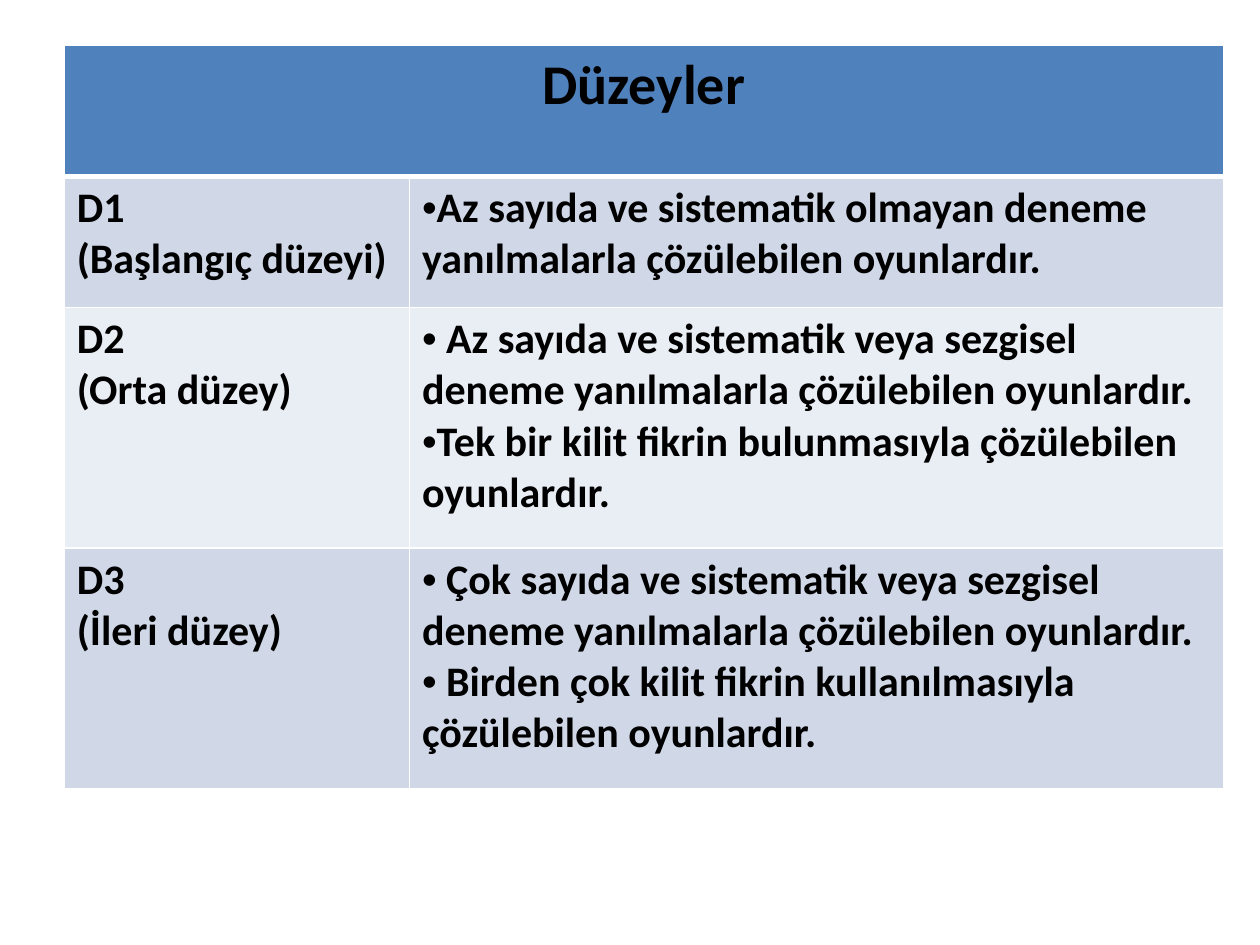
from dataclasses import dataclass

from lxml.etree import SubElement
from pptx import Presentation
from pptx.dml.color import RGBColor
from pptx.enum.text import PP_ALIGN
from pptx.oxml.ns import qn
from pptx.util import Pt


@dataclass(frozen=True)
class Theme:
    font: str = "Calibri"
    title_size: int = 32
    body_size: int = 24
    text: str = "000000"
    header: str = "4F81BD"
    bands: tuple = ("D0D8E8", "E9EDF4")
    border: str = "FFFFFF"
    thin: int = 1
    thick: int = 3


LEVELS = [
    (["D1", "(Başlangıç düzeyi)"],
     ["Az sayıda ve sistematik olmayan deneme yanılmalarla çözülebilen oyunlardır."]),
    (["D2", "(Orta düzey)"],
     [" Az sayıda ve sistematik veya sezgisel deneme yanılmalarla çözülebilen oyunlardır.",
      "Tek bir kilit fikrin bulunmasıyla çözülebilen oyunlardır."]),
    (["D3", "(İleri düzey)"],
     [" Çok sayıda ve sistematik veya sezgisel deneme yanılmalarla çözülebilen oyunlardır.",
      " Birden çok kilit fikrin kullanılmasıyla çözülebilen oyunlardır."]),
]


class SlideBuilder:
    def __init__(self, page, theme):
        self.page = page
        self.theme = theme

    def add_table(self, left, top, widths, heights):
        table = self.page.shapes.add_table(
            len(heights), len(widths), Pt(left), Pt(top),
            Pt(sum(widths)), Pt(sum(heights))).table
        table.first_row = table.horz_banding = False
        for column, width in zip(table.columns, widths):
            column.width = Pt(width)
        for row, height in zip(table.rows, heights):
            row.height = Pt(height)
        return table

    def style_cell(self, cell, fill, thick_side=None):
        properties = cell._tc.get_or_add_tcPr()
        for side in "LRTB":
            width = self.theme.thick if side == thick_side else self.theme.thin
            line = SubElement(properties, qn(f"a:ln{side}"), w=str(Pt(width)))
            solid = SubElement(line, qn("a:solidFill"))
            SubElement(solid, qn("a:srgbClr"), val=self.theme.border)
        cell.fill.solid()
        cell.fill.fore_color.rgb = RGBColor.from_string(fill)

    def write_cell(self, cell, lines, size, align=PP_ALIGN.LEFT, bullets=False):
        frame = cell.text_frame
        frame.text = "\n".join(lines)
        for para in frame.paragraphs:
            para.alignment = align
            if bullets:
                self.add_bullet(para)
            font = para.font
            font.name = self.theme.font
            font.size = Pt(size)
            font.bold = True
            font.color.rgb = RGBColor.from_string(self.theme.text)

    def add_bullet(self, para):
        properties = para._p.get_or_add_pPr()
        SubElement(properties, qn("a:buFont"), typeface="Arial")
        SubElement(properties, qn("a:buChar"), char="•")

    def add_levels_table(self, title, levels):
        theme = self.theme
        table = self.add_table(36.72, 25.92, (197.28, 465.12),
                               (74.88, 74.88, 137.52, 137.52))
        header = table.cell(0, 0)
        header.merge(table.cell(0, 1))
        for column in range(2):
            self.style_cell(table.cell(0, column), theme.header, "B")
        self.write_cell(header, [title], theme.title_size, PP_ALIGN.CENTER)

        for row, texts in enumerate(levels, start=1):
            fill = theme.bands[(row - 1) % 2]
            for column, lines in enumerate(texts):
                cell = table.cell(row, column)
                self.style_cell(cell, fill, "T" if row == 1 else None)
                self.write_cell(cell, lines, theme.body_size, bullets=column == 1)


def main():
    deck = Presentation()
    deck.slide_width, deck.slide_height = Pt(720), Pt(540)
    page = deck.slides.add_slide(deck.slide_layouts[6])
    SlideBuilder(page, Theme()).add_levels_table("Düzeyler", LEVELS)
    deck.save("out.pptx")


if __name__ == "__main__":
    main()
